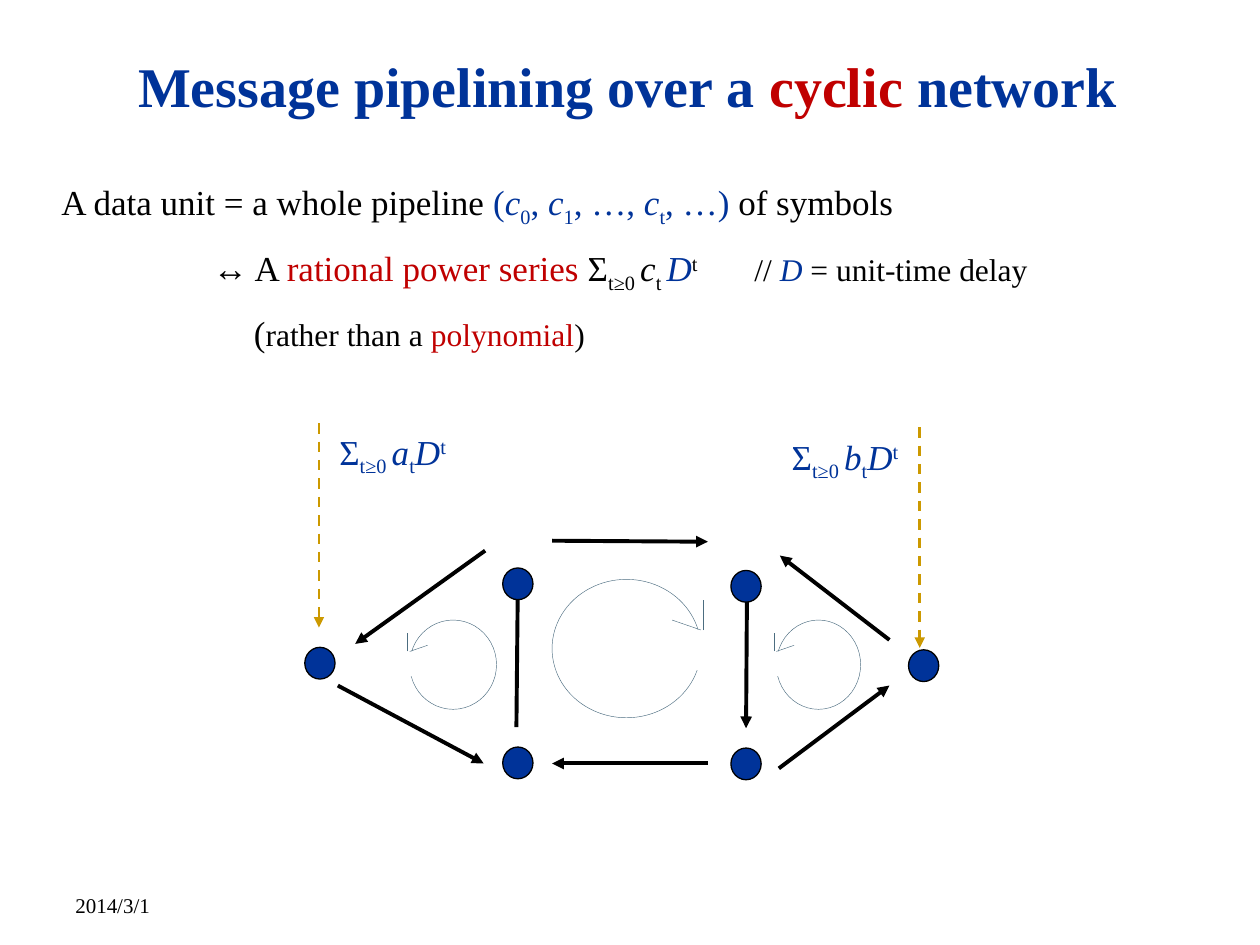
from dataclasses import dataclass

from lxml.etree import SubElement
from pptx import Presentation
from pptx.dml.color import RGBColor
from pptx.enum.dml import MSO_LINE_DASH_STYLE as Dash
from pptx.enum.shapes import MSO_CONNECTOR, MSO_SHAPE
from pptx.enum.text import MSO_ANCHOR as Anchor, PP_ALIGN as Align
from pptx.oxml.ns import qn
from pptx.util import Cm, Pt


@dataclass(frozen=True)
class Theme:
    """Colours, typeface and type sizes of the slide."""
    font: str = "Times New Roman"
    blue: str = "003399"
    red: str = "C00000"
    black: str = "000000"
    white: str = "FFFFFF"
    gold: str = "CC9900"
    slate: str = "4C6D80"
    title: int = 32
    body: int = 20
    note: int = 18
    footer: int = 12


class Board:
    """Draws styled elements on one slide, with lengths in centimetres."""

    def __init__(self, slide, theme):
        """Keep the slide and its theme."""
        self.shapes, self.theme = slide.shapes, theme

    def run(self, paragraph, text, color, size, style=""):
        """Add a run styled by letters: b bold, i italic, _ lowered, ^ raised."""
        run = paragraph.add_run()
        run.text = text
        font = run.font
        font.name, font.size = self.theme.font, Pt(size)
        font.color.rgb = RGBColor.from_string(color)
        font.bold, font.italic = "b" in style, "i" in style
        for mark, shift in (("_", "-25000"), ("^", "30000")):
            if mark in style:
                run.font._element.set("baseline", shift)

    def text(self, box, lines, anchor=Anchor.TOP, align=Align.LEFT, inset=None,
             spacing=None, before=0, indents=(), tab=None):
        """Add a text box whose lines are lists of runs."""
        frame = self.shapes.add_textbox(*map(Cm, box)).text_frame
        frame.word_wrap, frame.vertical_anchor = True, anchor
        if inset is not None:
            frame.margin_left = frame.margin_right = Cm(inset)
            frame.margin_top = frame.margin_bottom = Cm(inset)
        for row, runs in enumerate(lines):
            paragraph = frame.add_paragraph() if row else frame.paragraphs[0]
            paragraph.alignment = align
            if spacing:
                paragraph.line_spacing, paragraph.space_before = spacing, Pt(before)
            properties = paragraph._p.get_or_add_pPr()
            if indents:
                properties.set("marL", "0")
                properties.set("indent", str(Cm(indents[row])))
            if tab:
                stops = SubElement(properties, qn("a:tabLst"))
                SubElement(stops, qn("a:tab"), pos=str(Cm(tab)), algn="l")
            for run in runs:
                self.run(paragraph, *run)

    def shape(self, kind, box, fill=None, line=None, width=0.75):
        """Add a preset shape with optional fill and outline."""
        shape = self.shapes.add_shape(kind, *map(Cm, box))
        shape.shadow.inherit = False
        if fill:
            shape.fill.solid()
            shape.fill.fore_color.rgb = RGBColor.from_string(fill)
        else:
            shape.fill.background()
        if line:
            shape.line.color.rgb = RGBColor.from_string(line)
            shape.line.width = Pt(width)
        else:
            shape.line.fill.background()

    def line(self, start, end, color, width, arrow=False, dash=None):
        """Add a straight line, with an arrowhead at its end if wanted."""
        line = self.shapes.add_connector(MSO_CONNECTOR.STRAIGHT, *map(Cm, (*start, *end)))
        line.line.color.rgb = RGBColor.from_string(color)
        line.line.width = Pt(width)
        if dash:
            line.line.dash_style = dash
        if arrow:
            SubElement(line.line._get_or_add_ln(), qn("a:tailEnd"), type="triangle")
        SubElement(line._element.spPr, qn("a:effectLst"))

    def node(self, x, y):
        """Add a network node centred on a point."""
        width, height = 0.61, 0.64
        self.shape(MSO_SHAPE.OVAL, (x - width / 2, y - height / 2, width, height),
                   self.theme.blue, self.theme.black)

    def loop(self, left, top, width, height, side, scale):
        """Add an open cycle whose arrow sits on the right (1) or left (-1)."""
        slate = self.theme.slate
        x, y = left + (width if side > 0 else 0), top + 1.02 * scale
        self.shape(MSO_SHAPE.OVAL, (left, top, width, height), line=slate, width=0.25)
        self.shape(MSO_SHAPE.RECTANGLE, (x - 0.2 * scale, y, 0.4 * scale, 0.81 * scale),
                   self.theme.white)
        self.line((x - side * 0.58 * scale, y - 0.2 * scale), (x, y), slate, 0.25)
        post = x + side * 0.05
        self.line((post, y), (post, y - 0.61 * scale), slate, 0.25)

    def series(self, left, top, width, symbol):
        """Add the power series label of one input."""
        pieces = (("Σ", ""), ("t≥0 ", "_"), (symbol, "i"), ("t", "_"), ("D", "i"), ("t", "^"))
        runs = [(text, self.theme.blue, self.theme.body, style) for text, style in pieces]
        self.text((left, top, width, 1.07), [runs], inset=0.03)


def main():
    """Build and save the slide."""
    deck = Presentation()
    deck.slide_width, deck.slide_height = Cm(25.4), Cm(19.05)
    theme = Theme()
    board = Board(deck.slides.add_slide(deck.slide_layouts[6]), theme)
    blue, red, black = theme.blue, theme.red, theme.black
    body, note = theme.body, theme.note

    board.text((1.27, 17.35, 5.92, 1.27), [[("2014/3/1", black, theme.footer)]], Anchor.BOTTOM)
    heading = (("Message pipelining over a ", blue), ("cyclic", red), (" network", blue))
    board.text((1.19, 0.71, 22.91, 2.01),
               [[(text, color, theme.title, "b") for text, color in heading]],
               Anchor.MIDDLE, Align.CENTER)

    pipeline = (("(", ""), ("c", "i"), ("0", "_"), (", ", ""), ("c", "i"), ("1", "_"),
                (", …, ", ""), ("c", "i"), ("t", "_"), (", …) ", ""))
    data_unit = [("A data unit = a whole pipeline ", black, body),
                 *((text, blue, body, style) for text, style in pipeline),
                 ("of symbols", black, body)]
    power_series = [("↔ A ", black, body), ("rational power series ", red, body),
                    ("Σ", black, body), ("t≥0 ", black, body, "_"), ("c", black, body, "i"),
                    ("t ", black, body, "_"), ("D", blue, body, "i"), ("t", black, body, "^"),
                    ("\t// ", black, note), ("D", blue, note, "i"),
                    (" = unit-time delay", black, note)]
    contrast = [("(", black, body), ("rather than a ", black, note),
                ("polynomial", red, note), (")", black, note)]
    board.text((0.99, 3.33, 23.22, 3.33), [data_unit, power_series, contrast],
               spacing=1.2, before=5, indents=(0, 3.05, 3.88), tab=16.84)

    board.series(6.81, 8.64, 2.57, "a")
    board.series(15.93, 8.74, 2.77, "b")

    channels = (
        ((6.81, 13.82), (9.75, 15.39)), ((17.93, 12.9), (15.72, 11.2)),
        ((10.41, 14.66), (10.44, 11.61)), ((15.7, 15.49), (17.93, 13.82)),
        ((15.06, 11.66), (15.04, 14.68)), ((11.13, 10.9), (14.27, 10.92)),
        ((14.27, 15.39), (11.13, 15.39)), ((9.78, 11.1), (7.16, 12.98)))
    for start, end in channels:
        board.line(start, end, black, 2.25, arrow=True)

    for center in ((15.04, 11.82), (15.04, 15.4), (10.44, 11.77),
                   (10.44, 15.38), (18.62, 13.42), (6.45, 13.37)):
        board.node(*center)

    board.loop(11.13, 11.68, 3, 2.79, side=1, scale=1)
    for left, width in ((8.26, 1.75), (15.65, 1.7)):
        board.loop(left, 12.5, width, 1.8, side=-1, scale=0.62)

    for x, top, bottom in ((6.43, 8.53, 12.65), (18.54, 8.61, 13.06)):
        board.line((x, top), (x, bottom), theme.gold, 1.5, arrow=True, dash=Dash.DASH)

    deck.save("out.pptx")


if __name__ == "__main__":
    main()
